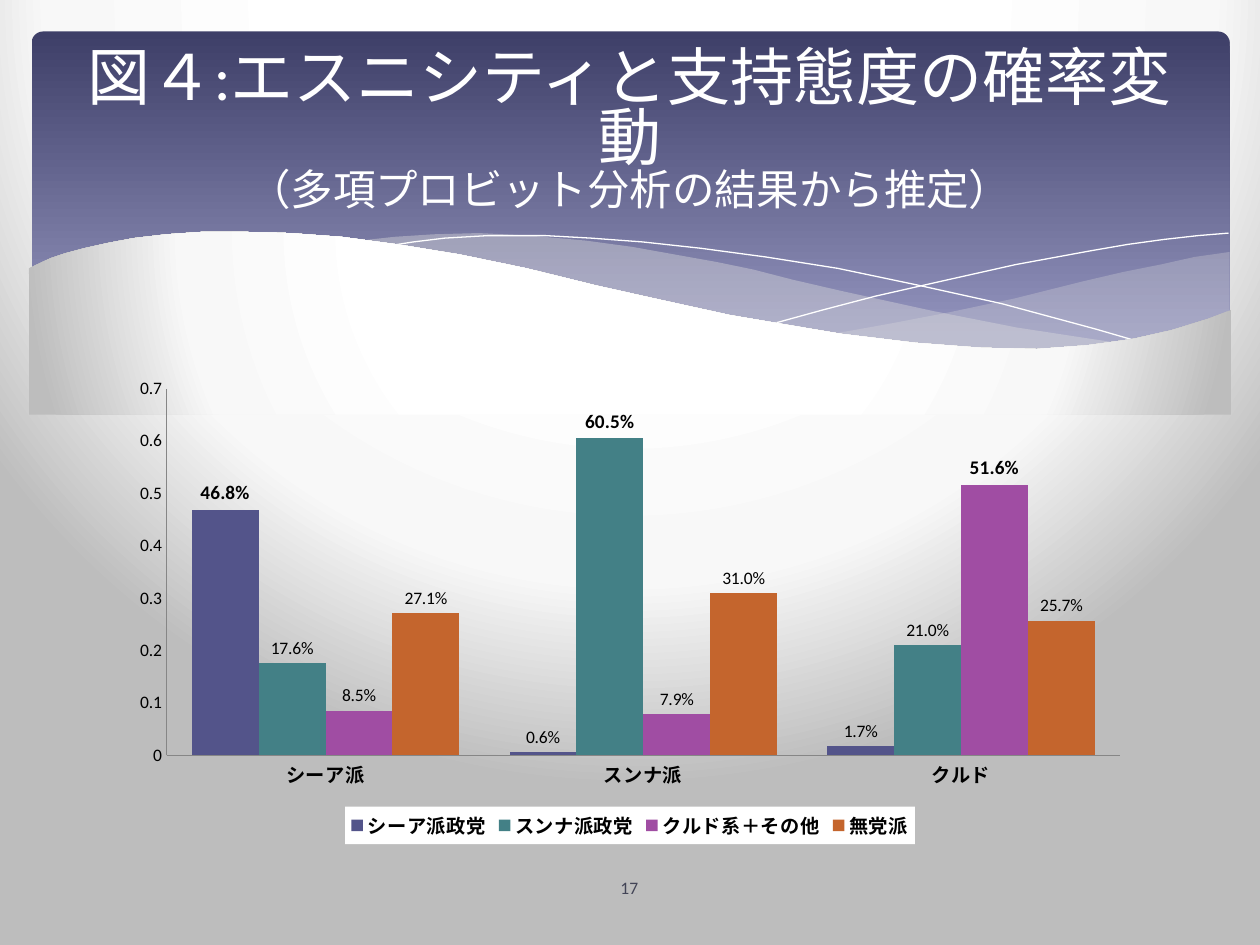
from lxml.etree import SubElement
from pptx import Presentation
from pptx.chart.data import CategoryChartData
from pptx.dml.color import RGBColor
from pptx.enum.chart import XL_CHART_TYPE, XL_LABEL_POSITION, XL_LEGEND_POSITION, XL_TICK_MARK
from pptx.enum.shapes import MSO_SHAPE
from pptx.enum.text import MSO_ANCHOR, MSO_AUTO_SIZE, PP_ALIGN
from pptx.oxml import parse_xml
from pptx.oxml.ns import nsdecls, qn
from pptx.util import Inches, Pt

GLOW = [(40, "FFFFFF"), (74, "F8F8F8"), (100, "BDBDBD")]
RING = '<a:path path="circle"><a:fillToRect l="20000" t="-40000" r="20000" b="140000"/></a:path>'
BAND = [(0, "3E3F68"), (90, "9394BE")]
DOWN = '<a:lin ang="5400000" scaled="0"/>'

RIGHT = [(9.76, 2), (9.48, 2.04), (9.21, 2.1), (8.91, 2.16), (8.61, 2.23), (8.05, 2.37),
         (7.53, 2.48), (7.06, 2.57), (6.61, 2.65), (6.91, 2.69), (7.19, 2.72), (7.57, 2.76),
         (7.92, 2.77), (8.24, 2.77), (8.54, 2.76), (8.81, 2.73), (9.05, 2.69), (9.28, 2.63),
         (9.49, 2.57), (9.76, 2.47)]
SWEEP = [(8.93, 2.73), (8.66, 2.69), (8.07, 2.6), (7.41, 2.47), (6.68, 2.31), (6.29, 2.22),
         (5.98, 2.14), (5.69, 2.08), (5.41, 2.03), (5.02, 1.96), (4.65, 1.91), (4.2, 1.87),
         (3.8, 1.85), (3.44, 1.86), (3.13, 1.88), (2.86, 1.91), (3.23, 1.96), (3.62, 2.03),
         (4.04, 2.11), (4.49, 2.22), (4.91, 2.32), (5.66, 2.48), (6.18, 2.58), (6.65, 2.66),
         (7.09, 2.72), (7.48, 2.76), (7.85, 2.78), (8.28, 2.78), (8.57, 2.77), (8.93, 2.73)]
FALL = [(3.09, 1.95), (3.28, 1.92), (3.53, 1.89), (3.87, 1.87), (4.33, 1.87), (4.69, 1.89),
        (5.1, 1.92), (5.56, 1.97), (6.08, 2.04), (6.65, 2.13), (7.27, 2.26), (7.95, 2.41),
        (8.69, 2.61), (9.07, 2.72)]
RISE = [(6.13, 2.57), (6.53, 2.46), (6.95, 2.35), (7.48, 2.23), (8.06, 2.1), (8.66, 1.99),
        (8.95, 1.94), (9.24, 1.9), (9.51, 1.87), (9.75, 1.85)]
FRONT = [(9.77, 2.46), (9.59, 2.53), (9.3, 2.62), (8.99, 2.69), (8.63, 2.74), (8.23, 2.77),
         (7.78, 2.76), (7.26, 2.72), (6.68, 2.65), (6.26, 2.58), (5.79, 2.5), (5.29, 2.39),
         (4.75, 2.27), (4.18, 2.13), (3.65, 2.02), (3.16, 1.94), (2.71, 1.88), (2.3, 1.85),
         (1.93, 1.84), (1.61, 1.84), (1.32, 1.86), (1.06, 1.89), (0.85, 1.93), (0.67, 1.97),
         (0.52, 2.01), (0.4, 2.05), (0.29, 2.1), (0.23, 2.13), (0.23, 3.29), (9.77, 3.29)]

GROUPS = ["シーア派", "スンナ派", "クルド"]
PARTIES = [("シーア派政党", "53548A", [0.468, 0.006, 0.017]),
           ("スンナ派政党", "438086", [0.176, 0.605, 0.21]),
           ("クルド系＋その他", "A04DA3", [0.085, 0.079, 0.516]),
           ("無党派", "C4652D", [0.271, 0.31, 0.257])]


def tint(code):
    """Turn a hex string into a colour."""
    return RGBColor.from_string(code)


def apply(item, **vals):
    """Set each named attribute on the item."""
    for name, val in vals.items():
        setattr(item, name, val)


class Deck:
    """Hold the style and the current slide."""

    def __init__(self):
        """Open a slide with a title."""
        self.show = Presentation()
        apply(self.show, slide_width=Inches(10), slide_height=Inches(7.5))
        self.slide = self.show.slides.add_slide(self.show.slide_layouts[5])
        self.shapes = self.slide.shapes
        self.face = "Calibri"

    def font(self, font, size, code="000000", bold=False):
        """Style one font."""
        apply(font, name=self.face, size=Pt(size), bold=bold)
        font.color.rgb = tint(code)

    def blend(self, fill, host, stops, kind):
        """Give the fill a gradient."""
        fill.solid()
        old = host.find(qn("a:solidFill"))
        marks = "".join(f'<a:gs pos="{pos * 1000}"><a:srgbClr val="{code}"/></a:gs>'
                        for pos, code in stops)
        new = parse_xml(f'<a:gradFill {nsdecls("a")} rotWithShape="1">'
                        f'<a:gsLst>{marks}</a:gsLst>{kind}</a:gradFill>')
        host.replace(old, new)

    def back(self):
        """Paint the background."""
        fill = self.slide.background.fill
        fill.solid()
        host = self.slide.element.find(".//" + qn("p:bgPr"))
        self.blend(fill, host, GLOW, RING)

    def band(self, left, top, width, height):
        """Draw the rounded title band."""
        box = self.shapes.add_shape(MSO_SHAPE.ROUNDED_RECTANGLE, Inches(left), Inches(top),
                                    Inches(width), Inches(height))
        box.adjustments[0] = 0.034
        box.shadow.inherit = False
        self.blend(box.fill, box.element.spPr, BAND, DOWN)
        box.line.fill.background()

    def trace(self, dots, close):
        """Outline a run of points."""
        dots = [(Inches(x), Inches(y)) for x, y in dots]
        pen = self.shapes.build_freeform(*dots[0])
        pen.add_line_segments(dots[1:], close=close)
        form = pen.convert_to_shape()
        form.shadow.inherit = False
        return form

    def wave(self, dots, alpha=None):
        """Draw a veil, or the glowing front wave."""
        form = self.trace(dots, True)
        props = form.element.spPr
        if alpha:
            form.fill.solid()
            form.fill.fore_color.rgb = tint("DEDEDE")
            SubElement(props.find(".//" + qn("a:srgbClr")), qn("a:alpha"), val=str(alpha * 1000))
        else:
            self.blend(form.fill, props, GLOW, RING)
        form.line.fill.background()

    def curve(self, dots):
        """Draw a white hairline."""
        form = self.trace(dots, False)
        form.fill.background()
        form.line.color.rgb = tint("FFFFFF")
        form.line.width = Pt(0)

    def title(self, rows):
        """Fill the title with sized rows."""
        box = self.shapes.title
        apply(box, left=Inches(0.5), top=Inches(0.37), width=Inches(9), height=Inches(1.37))
        apply(box.text_frame, vertical_anchor=MSO_ANCHOR.MIDDLE, auto_size=MSO_AUTO_SIZE.NONE,
              word_wrap=True)
        para = box.text_frame.paragraphs[0]
        apply(para, alignment=PP_ALIGN.CENTER, line_spacing=0.8)
        for spot, (text, size) in enumerate(rows):
            if spot:
                para.add_line_break()
            run = para.add_run()
            run.text = text
            self.font(run.font, size, "FFFFFF")
        self.shapes.element.append(box.element)

    def chart(self):
        """Add the clustered columns."""
        data = CategoryChartData()
        data.categories = GROUPS
        for name, _, vals in PARTIES:
            data.add_series(name, vals)
        chart = self.shapes.add_chart(XL_CHART_TYPE.COLUMN_CLUSTERED, Inches(0.95), Inches(2.93),
                                      Inches(8.1), Inches(3.77), data).chart
        apply(chart, has_title=False, has_legend=True)
        self.font(chart.font, 10)
        plot = chart.plots[0]
        apply(plot, gap_width=75, overlap=0, vary_by_categories=False)
        for spot, (bars, party) in enumerate(zip(plot.series, PARTIES)):
            self.bars(bars, party[1], spot)
        for axis in (chart.category_axis, chart.value_axis):
            apply(axis, major_tick_mark=XL_TICK_MARK.NONE, minor_tick_mark=XL_TICK_MARK.NONE,
                  has_major_gridlines=False)
            axis.format.line.color.rgb = tint("868686")
        apply(chart.value_axis, minimum_scale=0, maximum_scale=0.7, major_unit=0.1)
        apply(chart.value_axis.tick_labels, number_format="General", number_format_is_linked=False)
        self.font(chart.category_axis.tick_labels.font, 11, bold=True)
        self.legend(chart.legend)

    def bars(self, bars, code, spot):
        """Colour and label one series."""
        bars.format.fill.solid()
        bars.format.fill.fore_color.rgb = tint(code)
        bars.invert_if_negative = False
        marks = bars.data_labels
        apply(marks, show_value=True, number_format="0.0%", number_format_is_linked=False,
              position=XL_LABEL_POSITION.OUTSIDE_END)
        self.font(marks.font, 10)
        if spot < len(GROUPS):
            mark = bars.points[spot].data_label
            self.font(mark.font, 11, bold=True)
            mark.position = XL_LABEL_POSITION.OUTSIDE_END
            text = bars._element.find(".//" + qn("c:dLbl")).find(qn("c:txPr"))
            text.addprevious(parse_xml(
                f'<c:numFmt {nsdecls("c")} formatCode="0.0%" sourceLinked="0"/>'))

    def legend(self, key):
        """Set the white legend at the foot."""
        apply(key, position=XL_LEGEND_POSITION.BOTTOM, include_in_layout=False)
        self.font(key.font, 11, bold=True)
        key._element.find(qn("c:txPr")).addprevious(parse_xml(
            f'<c:spPr {nsdecls("c", "a")}><a:solidFill><a:srgbClr val="FFFFFF"/>'
            '</a:solidFill></c:spPr>'))

    def page(self, text):
        """Write the page number."""
        box = self.shapes.add_textbox(Inches(4.36), Inches(6.84), Inches(1.27), Inches(0.4))
        apply(box.text_frame, word_wrap=True, vertical_anchor=MSO_ANCHOR.MIDDLE)
        para = box.text_frame.paragraphs[0]
        para.alignment = PP_ALIGN.CENTER
        run = para.add_run()
        run.text = text
        self.font(run.font, 10, "424456")


def main():
    """Build the slide and save it."""
    deck = Deck()
    deck.back()
    deck.band(0.25, 0.25, 9.51, 2.7)
    deck.wave(RIGHT, 29)
    deck.wave(SWEEP, 40)
    deck.curve(FALL)
    deck.curve(RISE)
    deck.wave(FRONT)
    deck.title([("図４:エスニシティと支持態度の確率変動", 36),
                ("（多項プロビット分析の結果から推定）", 24.3)])
    deck.chart()
    deck.page("17")
    deck.show.save("out.pptx")


if __name__ == "__main__":
    main()
